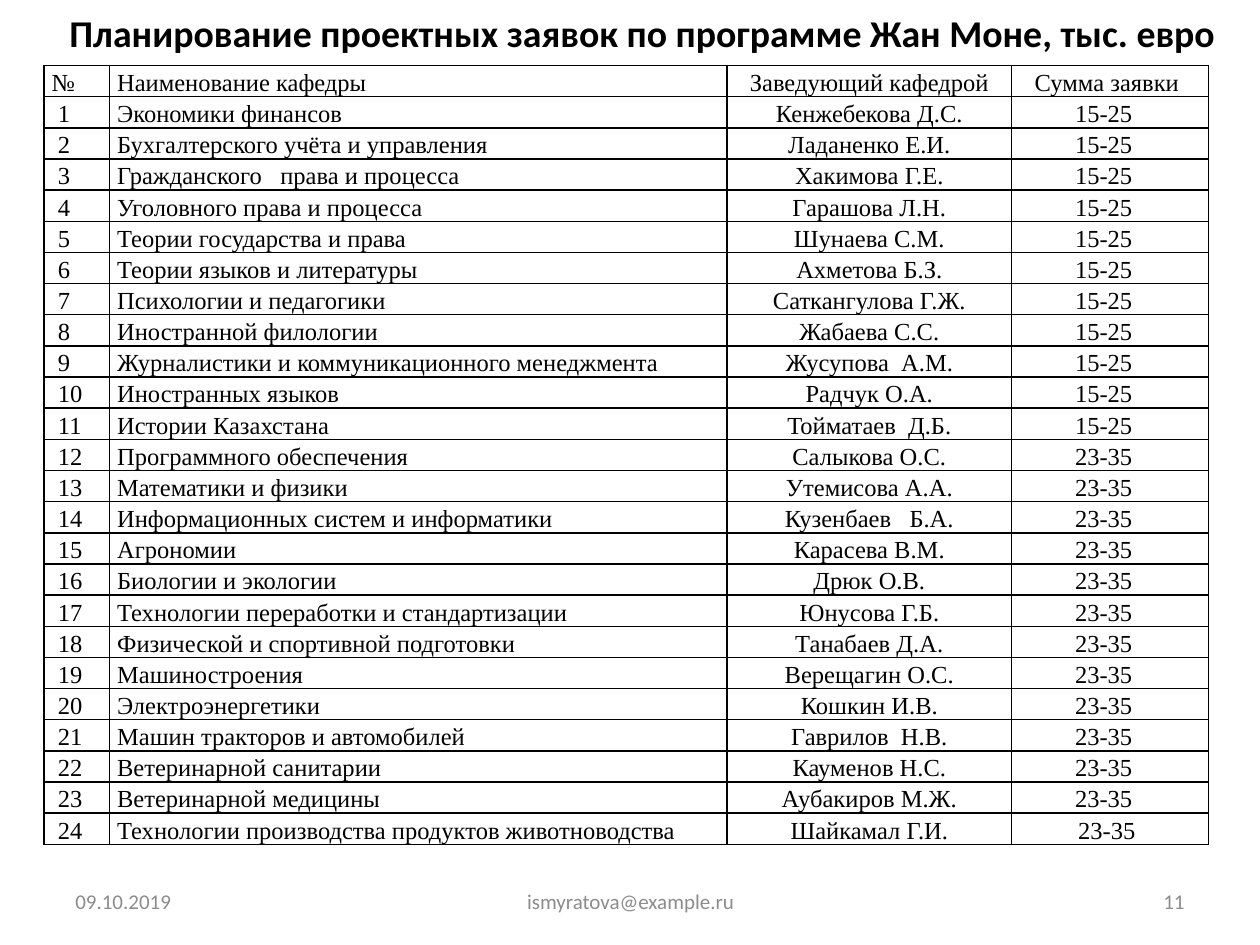
import pptx
import pptx.dml.color
import pptx.enum.text
import pptx.oxml
import pptx.oxml.ns
import pptx.util
from pptx.util import Inches

COLORS = {"text": "000000", "border": "000000", "footer": "8C8C8C"}
ALIGN = pptx.enum.text.PP_ALIGN
HEADINGS = ["№", "Наименование кафедры", "Заведующий кафедрой", "Сумма заявки"]
COLUMN_WIDTHS = [0.52, 4.9, 2.26, 1.56]
COLUMN_ALIGNMENTS = [ALIGN.LEFT, ALIGN.LEFT, ALIGN.CENTER, ALIGN.CENTER]
ROW_HEIGHT = 0.2
CELL_MARGIN = 0.06
SPACE_WIDTH = 0.05
BUDGETS = {
    "15-25": [
        ("Экономики финансов", "Кенжебекова Д.С."),
        ("Бухгалтерского учёта и управления", "Ладаненко Е.И."),
        ("Гражданского   права и процесса", "Хакимова Г.Е."),
        ("Уголовного права и процесса", "Гарашова Л.Н."),
        ("Теории государства и права", "Шунаева С.М."),
        ("Теории языков и литературы", "Ахметова Б.З."),
        ("Психологии и педагогики", "Саткангулова Г.Ж."),
        ("Иностранной филологии", "Жабаева С.С."),
        ("Журналистики и коммуникационного менеджмента", "Жусупова  А.М."),
        ("Иностранных языков", "Радчук О.А."),
        ("Истории Казахстана", "Тойматаев  Д.Б."),
    ],
    "23-35": [
        ("Программного обеспечения", "Салыкова О.С."),
        ("Математики и физики", "Утемисова А.А."),
        ("Информационных систем и информатики", "Кузенбаев   Б.А."),
        ("Агрономии", "Карасева В.М."),
        ("Биологии и экологии", "Дрюк О.В."),
        ("Технологии переработки и стандартизации", "Юнусова Г.Б."),
        ("Физической и спортивной подготовки", "Танабаев Д.А."),
        ("Машиностроения", "Верещагин О.С."),
        ("Электроэнергетики", "Кошкин И.В."),
        ("Машин тракторов и автомобилей", "Гаврилов  Н.В."),
        ("Ветеринарной санитарии", "Кауменов Н.С."),
        ("Ветеринарной медицины", "Аубакиров М.Ж."),
        ("Технологии производства продуктов животноводства", "Шайкамал Г.И."),
    ],
}


def write_text(frame, text, *, size, font, color, bold=False,
               align=ALIGN.LEFT, line_spacing=None):
    frame.word_wrap = True
    paragraph = frame.paragraphs[0]
    paragraph.alignment = align
    if line_spacing:
        paragraph.line_spacing = line_spacing
    run = paragraph.add_run()
    run.text = text
    run.font.size = pptx.util.Pt(size)
    run.font.name = font
    run.font.bold = bold
    run.font.color.rgb = pptx.dml.color.RGBColor.from_string(COLORS[color])


def add_title(slide, text):
    title = slide.shapes.title
    title.left, title.top = Inches(0.2), Inches(0.03)
    title.width, title.height = Inches(9.8), Inches(0.46)
    title.text_frame.vertical_anchor = pptx.enum.text.MSO_ANCHOR.MIDDLE
    write_text(title.text_frame, text, size=21.6, font="Calibri", color="text",
               bold=True, align=ALIGN.CENTER)


def add_footer(slide, text, left, width, align):
    footer = slide.shapes.add_textbox(Inches(left), Inches(6.95), Inches(width), Inches(0.4))
    footer.text_frame.vertical_anchor = pptx.enum.text.MSO_ANCHOR.MIDDLE
    write_text(footer.text_frame, text, size=12, font="Calibri", color="footer", align=align)


def add_borders(cell):
    properties = cell._tc.get_or_add_tcPr()
    for index, side in enumerate(["lnL", "lnR", "lnT", "lnB"]):
        border = pptx.oxml.parse_xml(
            f'<a:{side} {pptx.oxml.ns.nsdecls("a")} w="12700"><a:solidFill>'
            f'<a:srgbClr val="{COLORS["border"]}"/></a:solidFill></a:{side}>')
        properties.insert(index, border)


def fill_cell(cell, text, align, indent_left, indent_right):
    cell.margin_left = Inches(CELL_MARGIN + indent_left)
    cell.margin_right = Inches(CELL_MARGIN + indent_right)
    cell.margin_top = cell.margin_bottom = 0
    cell.vertical_anchor = pptx.enum.text.MSO_ANCHOR.MIDDLE
    cell.fill.background()
    add_borders(cell)
    write_text(cell.text_frame, text, size=14, font="Times New Roman", color="text",
               align=align, line_spacing=1.15)


def add_department_table(slide):
    departments = [(name, head, budget) for budget, entries in BUDGETS.items()
                   for name, head in entries]
    rows = [HEADINGS] + [(str(number), *department)
                         for number, department in enumerate(departments, 1)]
    frame = slide.shapes.add_table(len(rows), len(HEADINGS), Inches(0.35), Inches(0.52),
                                   Inches(sum(COLUMN_WIDTHS)), Inches(6.28))
    table = frame.table
    table.first_row = table.horz_banding = False
    for column, width in zip(table.columns, COLUMN_WIDTHS):
        column.width = Inches(width)
    for row_index, values in enumerate(rows):
        table.rows[row_index].height = Inches(ROW_HEIGHT)
        is_edge = row_index in (0, len(rows) - 1)
        for column_index, value in enumerate(values):
            indent_left = SPACE_WIDTH if column_index == 0 and row_index else 0
            indent_right = 0
            if column_index == 3:
                indent_right = SPACE_WIDTH if is_edge else 2 * SPACE_WIDTH
            fill_cell(table.cell(row_index, column_index), value,
                      COLUMN_ALIGNMENTS[column_index], indent_left, indent_right)
    frame.height = Inches(6.28)


def main():
    presentation = pptx.Presentation()
    presentation.slide_width, presentation.slide_height = Inches(10), Inches(7.5)
    slide = presentation.slides.add_slide(presentation.slide_layouts[5])
    add_title(slide, "Планирование проектных заявок по программе Жан Моне, тыс. евро")
    add_department_table(slide)
    add_footer(slide, "09.10.2019", 0.5, 2.33, ALIGN.LEFT)
    add_footer(slide, "ismyratova@example.ru", 3.42, 3.17, ALIGN.CENTER)
    add_footer(slide, "11", 7.17, 2.33, ALIGN.RIGHT)
    presentation.save("out.pptx")


if __name__ == "__main__":
    main()
